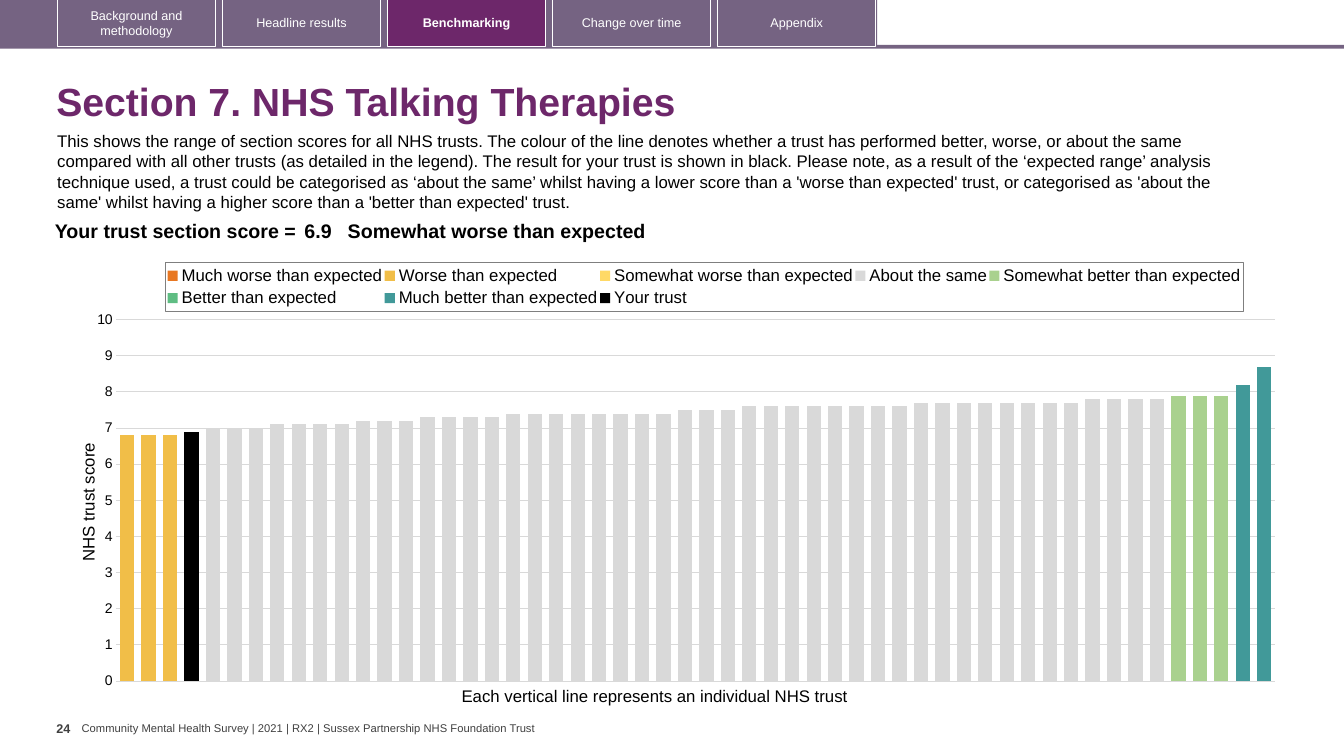
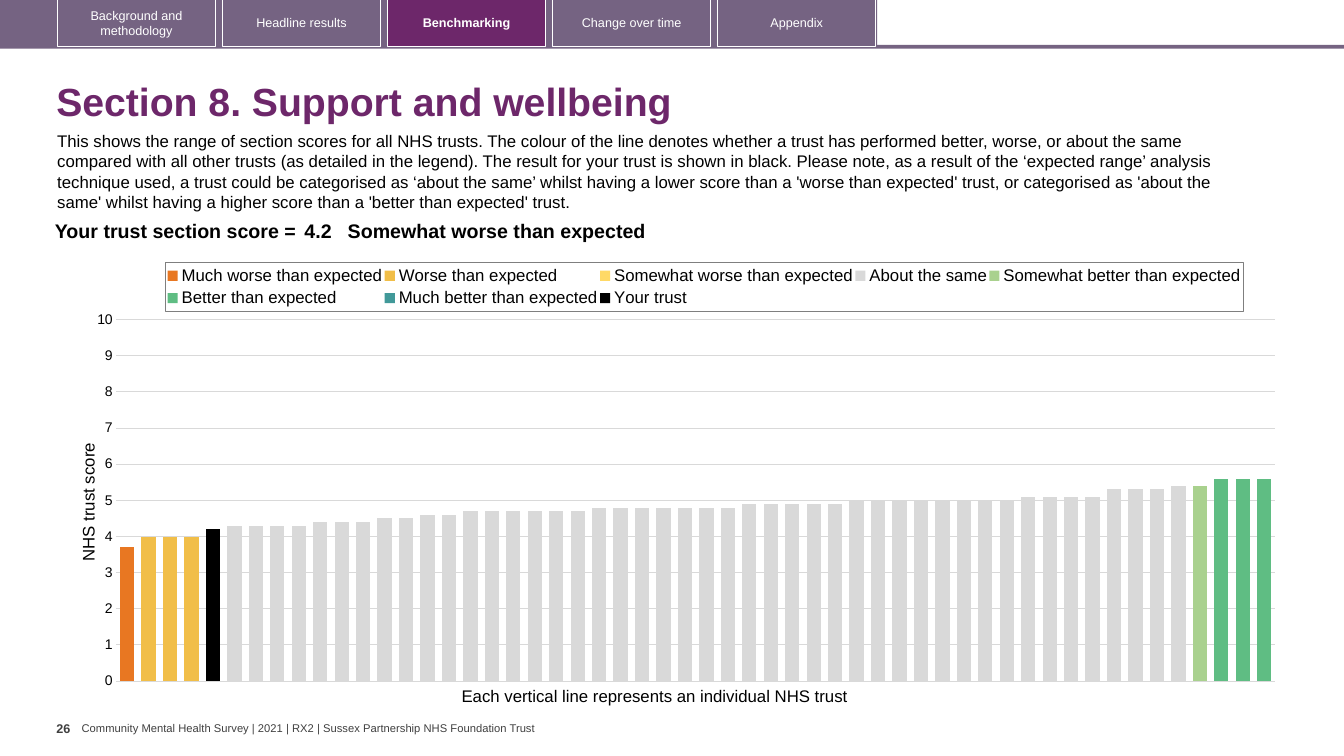
from copy import deepcopy
from pptx import Presentation
from pptx.chart.data import CategoryChartData as ChartData
from pptx.dml.color import RGBColor
from pptx.enum.chart import XL_CHART_TYPE as ChartType, XL_LEGEND_POSITION as LegendPosition
from pptx.enum.chart import XL_TICK_MARK as TickMark
from pptx.enum.shapes import MSO_SHAPE as Preset
from pptx.enum.text import MSO_ANCHOR as Anchor, PP_ALIGN as Align
from pptx.oxml import parse_xml
from pptx.oxml.ns import nsdecls, qn
from pptx.util import Pt

BLACK = RGBColor(0x00, 0x00, 0x00)
WHITE = RGBColor(0xFF, 0xFF, 0xFF)
MAUVE = RGBColor(0x75, 0x63, 0x82)
PLUM = RGBColor(0x6D, 0x27, 0x6A)
DARK_GREY = RGBColor(0x40, 0x40, 0x40)
LIGHT_GREY = RGBColor(0xD9, 0xD9, 0xD9)

MUCH_WORSE = "Much worse than expected"
WORSE = "Worse than expected"
SOMEWHAT_WORSE = "Somewhat worse than expected"
SAME = "About the same"
SOMEWHAT_BETTER = "Somewhat better than expected"
BETTER = "Better than expected"
MUCH_BETTER = "Much better than expected"
YOUR_TRUST = "Your trust"

SERIES_COLOURS = {
    MUCH_WORSE: RGBColor(0xE8, 0x77, 0x22),
    WORSE: RGBColor(0xF1, 0xBE, 0x48),
    SOMEWHAT_WORSE: RGBColor(0xFF, 0xD9, 0x66),
    SAME: LIGHT_GREY,
    SOMEWHAT_BETTER: RGBColor(0xA9, 0xD1, 0x8E),
    BETTER: RGBColor(0x5F, 0xBD, 0x83),
    MUCH_BETTER: RGBColor(0x41, 0x99, 0x99),
    YOUR_TRUST: BLACK,
}

TABS = ["Background and methodology", "Headline results", "Benchmarking", "Change over time", "Appendix"]
ACTIVE_TAB = "Benchmarking"
FOOTER = "Community Mental Health Survey | 2021 | RX2 | Sussex Partnership NHS Foundation Trust"
EXPLANATION = (
    "This shows the range of section scores for all NHS trusts. The colour of the line denotes whether a trust "
    "has performed better, worse, or about the same compared with all other trusts (as detailed in the legend). "
    "The result for your trust is shown in black. Please note, as a result of the ‘expected range’ analysis "
    "technique used, a trust could be categorised as ‘about the same’ whilst having a lower score than a "
    "'worse than expected' trust, or categorised as 'about the same' whilst having a higher score than a "
    "'better than expected' trust."
)
CAPTION = "Each vertical line represents an individual NHS trust"
AXIS_TITLE = "NHS trust score"
SCORE_LABEL = "Your trust section score ="

SECTIONS = [
    {
        "title": "Section 7. NHS Talking Therapies",
        "page": "24",
        "your_band": SOMEWHAT_WORSE,
        "score_counts": [
            (WORSE, [(6.8, 3)]),
            (SOMEWHAT_WORSE, [(6.9, 1)]),
            (SAME, [(7, 3), (7.1, 4), (7.2, 3), (7.3, 4), (7.4, 8), (7.5, 3), (7.6, 8), (7.7, 8), (7.8, 4)]),
            (SOMEWHAT_BETTER, [(7.9, 3)]),
            (MUCH_BETTER, [(8.2, 1), (8.7, 1)]),
        ],
    },
    {
        "title": "Section 8. Support and wellbeing",
        "page": "26",
        "your_band": SOMEWHAT_WORSE,
        "score_counts": [
            (MUCH_WORSE, [(3.7, 1)]),
            (WORSE, [(4, 3)]),
            (SOMEWHAT_WORSE, [(4.2, 1)]),
            (SAME, [(4.3, 4), (4.4, 3), (4.5, 2), (4.6, 2), (4.7, 6), (4.8, 7), (4.9, 5), (5, 8),
                    (5.1, 4), (5.3, 3), (5.4, 1)]),
            (SOMEWHAT_BETTER, [(5.4, 1)]),
            (BETTER, [(5.6, 3)]),
        ],
    },
]

SLIDE_WIDTH, SLIDE_HEIGHT = 960, 540
TAB_LEFT, TAB_PITCH, TAB_WIDTH = 41, 117.9, 113
TABLE_COLUMNS = [189.4, 33.8, 618.5]

TITLE_FONT = {"size": Pt(28), "bold": True, "color": PLUM}
BODY_FONT = {"size": Pt(12), "color": BLACK}
SCORE_FONT = {"size": Pt(14), "bold": True, "color": BLACK}
PAGE_FONT = {"size": Pt(9), "bold": True, "color": DARK_GREY}
FOOTER_FONT = {"size": Pt(8), "color": DARK_GREY}
AXIS_FONT = {"size": Pt(10), "color": BLACK}


def set_font(font, formats):
    for name, value in {"name": "Arial", "bold": False, **formats}.items():
        if name == "color":
            font.color.rgb = value
        else:
            setattr(font, name, value)


def set_margins(target, left, top, right, bottom):
    margins = {"left": left, "top": top, "right": right, "bottom": bottom}
    for side, value in margins.items():
        setattr(target, f"margin_{side}", Pt(value))


def write(frame, text, formats, align=Align.LEFT):
    paragraph = frame.paragraphs[0]
    paragraph.text = text
    paragraph.alignment = align
    set_font(paragraph.runs[0].font, formats)
    return paragraph


def add_text(slide, box, text, formats, wrap=True, anchor=Anchor.TOP, margins=(7.2, 3.6, 7.2, 3.6)):
    frame = slide.shapes.add_textbox(*map(Pt, box)).text_frame
    frame.word_wrap = wrap
    frame.vertical_anchor = anchor
    set_margins(frame, *margins)
    return write(frame, text, formats)


def add_rectangle(slide, box, colour=None, outline=None):
    shape = slide.shapes.add_shape(Preset.RECTANGLE, *map(Pt, box))
    shape.shadow.inherit = False
    if colour is None:
        shape.fill.background()
    else:
        shape.fill.solid()
        shape.fill.fore_color.rgb = colour
    if outline is None:
        shape.line.fill.background()
    else:
        shape.line.color.rgb = outline
        shape.line.width = Pt(0.75)
    return shape


def add_frame(slide, section):
    add_text(slide, (58.3, 515.5, 328, 9.4), FOOTER, FOOTER_FONT, False, Anchor.MIDDLE, (0, 0, 0, 0))
    add_rectangle(slide, (0, 32, SLIDE_WIDTH, 2.8), MAUVE)
    add_rectangle(slide, (0, 0, 626.5, 33.8), MAUVE)
    for index, label in enumerate(TABS):
        active = label == ACTIVE_TAB
        box = (TAB_LEFT + index * TAB_PITCH, -0.7, TAB_WIDTH, 33.8)
        tab = add_rectangle(slide, box, PLUM if active else None, WHITE)
        tab.text_frame.word_wrap = True
        tab.text_frame.vertical_anchor = Anchor.MIDDLE
        write(tab.text_frame, label, {"size": Pt(9), "bold": active, "color": WHITE}, Align.CENTER)
    title = add_text(slide, (33.1, 48.2, 899.3, 51.8), section["title"], TITLE_FONT, anchor=Anchor.MIDDLE)
    title.line_spacing = 0.9
    add_text(slide, (40.3, 511.2, 18, 28.8), section["page"], PAGE_FONT, False, margins=(0, 3.6, 0, 3.6))
    add_text(slide, (33.8, 90, 873.4, 65.5), EXPLANATION, BODY_FONT)
    add_text(slide, (322.6, 486, 296, 21.6), CAPTION, BODY_FONT, False)


def expand_scores(section):
    return [
        (band, score)
        for band, counts in section["score_counts"]
        for score, count in counts
        for _ in range(count)
    ]


def set_layout(parent, position, values, target=None):
    previous = parent.find(qn("c:layout"))
    if previous is not None:
        parent.remove(previous)
    inner = f'<c:layoutTarget val="{target}"/>' if target else ""
    modes = '<c:xMode val="edge"/><c:yMode val="edge"/>'
    numbers = "".join(f'<c:{name} val="{value}"/>' for name, value in zip("xywh", values))
    layout = f'<c:layout {nsdecls("c")}><c:manualLayout>{inner}{modes}{numbers}</c:manualLayout></c:layout>'
    parent.insert(position, parse_xml(layout))


def move_last_series_to_right_axis(plot_area):
    left_bars = plot_area.find(qn("c:barChart"))
    left_axes = [plot_area.find(qn(tag)) for tag in ("c:catAx", "c:valAx")]
    right_bars = deepcopy(left_bars)
    right_axes = [deepcopy(axis) for axis in left_axes]
    new_ids = {axis.find(qn("c:axId")).get("val"): str(number) for number, axis in enumerate(left_axes, 5001)}
    for part in [right_bars, *right_axes]:
        for reference in part.iter(qn("c:axId"), qn("c:crossAx")):
            reference.set("val", new_ids[reference.get("val")])
    left_bars.remove(left_bars.findall(qn("c:ser"))[-1])
    for series in right_bars.findall(qn("c:ser"))[:-1]:
        right_bars.remove(series)
    value_axis = right_axes[1]
    for tag in ("c:majorGridlines", "c:title"):
        value_axis.remove(value_axis.find(qn(tag)))
    for tag, value in {"c:axPos": "r", "c:tickLblPos": "none", "c:crosses": "max"}.items():
        value_axis.find(qn(tag)).set("val", value)
    left_bars.addnext(right_bars)
    left_axes[1].addnext(right_axes[0])
    right_axes[0].addnext(value_axis)


def add_score_chart(slide, section):
    scores = expand_scores(section)
    data = ChartData()
    data.categories = [str(number) for number in range(1, len(scores) + 1)]
    for name in SERIES_COLOURS:
        wanted = section["your_band"] if name == YOUR_TRUST else name
        data.add_series(name, [score if band == wanted else None for band, score in scores])
    box = map(Pt, (48.2, 177.8, 874.8, 319.7))
    chart = slide.shapes.add_chart(ChartType.COLUMN_CLUSTERED, *box, data).chart
    chart.has_title = False
    set_font(chart.font, {**AXIS_FONT, "name": "Calibri"})

    plot = chart.plots[0]
    plot.gap_width, plot.overlap, plot.vary_by_categories = 50, 100, False
    for series in plot.series:
        series.format.fill.solid()
        series.format.fill.fore_color.rgb = SERIES_COLOURS[series.name]

    chart.has_legend = True
    legend = chart.legend
    legend.position = LegendPosition.TOP
    legend.include_in_layout = False
    set_font(legend.font, BODY_FONT)
    legend_element = legend._element
    set_layout(legend_element, 1, (0.08, 0.03, 0.88, 0.11))
    legend_element.find(qn("c:txPr")).addprevious(parse_xml(
        f'<c:spPr {nsdecls("c", "a")}><a:ln w="9525"><a:solidFill>'
        '<a:srgbClr val="7F7F7F"/></a:solidFill></a:ln></c:spPr>'))

    chart.category_axis.visible = False
    axis = chart.value_axis
    limits = {"minimum_scale": 0, "maximum_scale": 10, "major_unit": 1, "major_tick_mark": TickMark.NONE}
    for name, value in limits.items():
        setattr(axis, name, value)
    axis.format.line.fill.background()
    axis.major_gridlines.format.line.color.rgb = LIGHT_GREY
    axis.major_gridlines.format.line.width = Pt(0.75)
    set_font(axis.tick_labels.font, AXIS_FONT)
    title_frame = axis.axis_title.text_frame
    write(title_frame, AXIS_TITLE, BODY_FONT, Align.CENTER)
    title_element = axis.axis_title._element
    title_element.find(".//" + qn("a:bodyPr")).set("rot", "-5400000")
    set_layout(title_element, 1, (0.006, 0.427))

    plot_area = chart._chartSpace.find(".//" + qn("c:plotArea"))
    set_layout(plot_area, 0, (0.04, 0.158, 0.946, 0.808), "inner")
    move_last_series_to_right_axis(plot_area)


def add_score_table(slide, section):
    band = section["your_band"]
    score = dict(expand_scores(section))[band]
    box = map(Pt, (25.2, 154.8, sum(TABLE_COLUMNS), 22.3))
    table = slide.shapes.add_table(1, len(TABLE_COLUMNS), *box).table
    table.first_row = table.horz_banding = False
    cells = [(SCORE_LABEL, Align.RIGHT, 2.9), (str(score), Align.LEFT, 2.9), (band, Align.LEFT, 0)]
    for index, (text, align, side) in enumerate(cells):
        table.columns[index].width = Pt(TABLE_COLUMNS[index])
        cell = table.cell(0, index)
        cell.fill.background()
        set_margins(cell, side, 2.9, side, 2.9)
        write(cell.text_frame, text, SCORE_FONT, align)


def main():
    presentation = Presentation()
    presentation.slide_width, presentation.slide_height = Pt(SLIDE_WIDTH), Pt(SLIDE_HEIGHT)
    for section in SECTIONS:
        slide = presentation.slides.add_slide(presentation.slide_layouts[6])
        add_frame(slide, section)
        add_score_chart(slide, section)
        add_score_table(slide, section)
    presentation.save("out.pptx")


if __name__ == "__main__":
    main()
